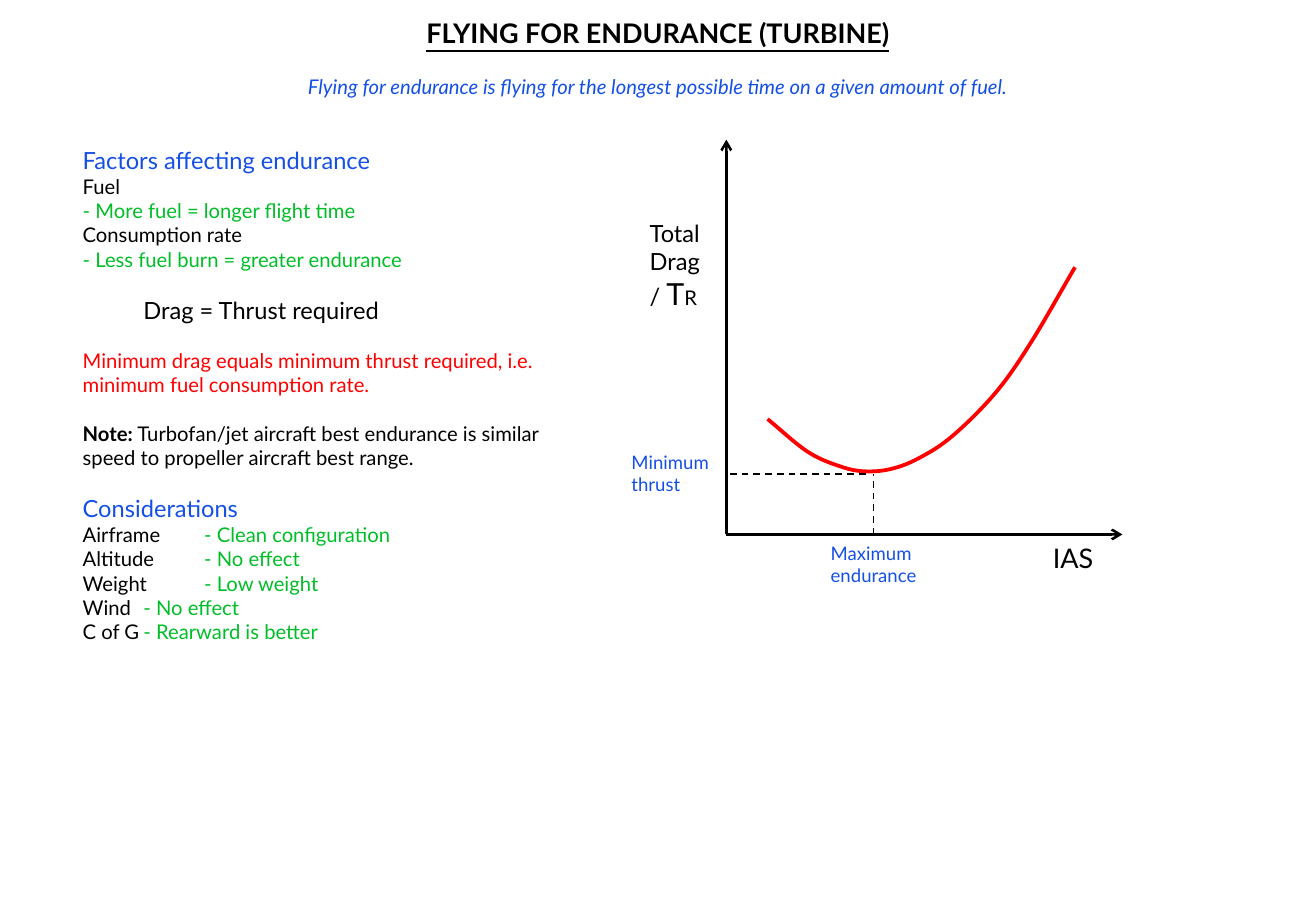
from lxml import etree
from pptx import Presentation
from pptx import util as u
from pptx.dml.color import RGBColor
from pptx.enum import dml, text
from pptx.enum.shapes import MSO_CONNECTOR
from pptx.oxml.ns import qn

COLORS = {"ink": "000000", "blue": "1450E6", "green": "00BE28", "red": "FF0000"}
GAP = 14.4
ORIGIN = (430.5, 316.8)
MINIMUM = (517.7, 280.8)
DRAG_KNOTS = [(455, 248.4), (478.8, 267.8), (498.2, 276.5), (512.6, 279.4), (528.5, 277.9),
              (545, 271.4), (564.5, 258.5), (589.7, 233.3), (610.6, 203.8), (637.2, 158.4)]


def line(*runs, before=0, indent=0, tab=None, align=text.PP_ALIGN.LEFT):
    """Describe a paragraph whose runs are (wording, size, colour, extra font values)."""
    return {"runs": runs, "before": before, "indent": indent, "tab": tab, "align": align}


def run(wording, size=12, color="ink", **extra):
    """Describe one run of text."""
    return wording, color, {"name": "Lato", "size": u.Pt(size), **extra}


def consideration(factor, advice, tab=72):
    """Describe a factor with its advice at a tab stop."""
    return line(run(factor + "\t"), run(advice, color="green"), tab=tab)


def apply(target, values):
    """Set each attribute of the target from a dict."""
    for name, value in values.items():
        setattr(target, name, value)


def write(shape, box, lines):
    """Place a text shape and fill it with formatted paragraphs."""
    apply(shape, dict(zip(("left", "top", "width", "height"), map(u.Pt, box))))
    frame = shape.text_frame
    apply(frame, {"word_wrap": True, "auto_size": text.MSO_AUTO_SIZE.SHAPE_TO_FIT_TEXT,
                  "vertical_anchor": text.MSO_ANCHOR.TOP})
    for index, entry in enumerate(lines):
        paragraph = frame.add_paragraph() if index else frame.paragraphs[0]
        apply(paragraph, {"alignment": entry["align"], "space_before": u.Pt(entry["before"])})
        properties = paragraph._p.get_or_add_pPr()
        properties.set("marL", str(u.Pt(entry["indent"])))
        properties.set("indent", "0")
        etree.SubElement(properties, qn("a:buNone"))
        if entry["tab"]:
            stops = etree.SubElement(properties, qn("a:tabLst"))
            etree.SubElement(stops, qn("a:tab"), pos=str(u.Pt(entry["tab"])), algn="l")
        for wording, color, values in entry["runs"]:
            part = paragraph.add_run()
            part.text = wording
            apply(part.font, values)
            part.font.color.rgb = RGBColor.from_string(COLORS[color])


def add_label(slide, box, *lines):
    """Add a free text label."""
    write(slide.shapes.add_textbox(0, 0, 0, 0), box, lines)


def add_line(slide, start, end, width, arrow=False, dashed=False):
    """Add a straight axis or guide line."""
    rule = slide.shapes.add_connector(MSO_CONNECTOR.STRAIGHT, *map(u.Pt, start + end))
    rule.line.color.rgb = RGBColor.from_string(COLORS["ink"])
    rule.line.width = u.Pt(width)
    if dashed:
        rule.line.dash_style = dml.MSO_LINE.DASH
    if arrow:
        etree.SubElement(rule.line._get_or_add_ln(), qn("a:tailEnd"), type="arrow")
    etree.SubElement(rule._element.spPr, qn("a:effectLst"))


def smooth(knots, steps=10):
    """Return points on a Catmull-Rom spline through the knots."""
    first, last = [tuple(2 * a - b for a, b in zip(*pair))
                   for pair in (knots[:2], knots[:-3:-1])]
    padded = [first, *knots, last]
    points = [knots[0]]
    for window in zip(padded, padded[1:], padded[2:], padded[3:]):
        for step in range(1, steps + 1):
            t = step / steps
            points.append(tuple(
                b + t * (c - a) / 2 + t ** 2 * (2 * a - 5 * b + 4 * c - d) / 2
                + t ** 3 * (3 * b - a - 3 * c + d) / 2
                for a, b, c, d in zip(*window)))
    return points


def add_curve(slide, knots, color, width):
    """Add a smooth open curve."""
    points = [tuple(map(u.Pt, point)) for point in smooth(knots)]
    builder = slide.shapes.build_freeform(*points[0])
    builder.add_line_segments(points[1:], close=False)
    curve = builder.convert_to_shape()
    curve.shadow.inherit = False
    curve.fill.background()
    curve.line.color.rgb = RGBColor.from_string(COLORS[color])
    curve.line.width = u.Pt(width)


def add_drag_graph(slide):
    """Draw the drag curve with its axes, guides and labels."""
    x, y = ORIGIN
    speed, thrust = MINIMUM
    add_line(slide, ORIGIN, (x, 82.8), 1.5, arrow=True)
    add_line(slide, ORIGIN, (665.3, y), 1.5, arrow=True)
    add_line(slide, (speed, y), MINIMUM, 1, dashed=True)
    add_line(slide, (432.7, thrust), (513.4, thrust), 1, dashed=True)
    add_label(slide, (378, 126, 52.6, 63.4),
              line(run("Total Drag / ", 14), run("T", 18), run("R", 12)))
    for left, top, words in ((485.3, 317.5, ("Maximum", "endurance")),
                             (367.2, 263.5, ("Minimum", "thrust"))):
        add_label(slide, (left, top, 108, 33.8),
                  *[line(run(word, 11, "blue")) for word in words])
    add_label(slide, (617, 317.5, 105, 26.6), line(run("IAS", 16)))
    add_curve(slide, DRAG_KNOTS, "red", 2.25)


def main():
    """Build the endurance slide."""
    deck = Presentation()
    apply(deck, {"slide_width": u.Pt(780), "slide_height": u.Pt(540)})
    slide = deck.slides.add_slide(deck.slide_layouts[1])
    center = text.PP_ALIGN.CENTER
    write(slide.shapes.title, (0, 6.5, 780, 26.6),
          [line(run("FLYING FOR ENDURANCE (TURBINE)", 16, bold=True, underline=True),
                align=center)])
    add_label(slide, (133, 40.3, 514, 21.6),
              line(run("Flying for endurance is flying for the longest possible time "
                       "on a given amount of fuel.", color="blue", italic=True), align=center))
    write(slide.placeholders[1], (41.8, 82.8, 289.4, 305.3), [
        line(run("Factors affecting endurance", 14, "blue")),
        line(run("Fuel")),
        line(run("- More fuel = longer flight time", color="green")),
        line(run("Consumption rate")),
        line(run("- Less fuel burn = greater endurance", color="green")),
        line(run("Drag = Thrust required", 14), before=GAP, indent=36),
        line(run("Minimum drag equals minimum thrust required, i.e. "
                 "minimum fuel consumption rate.", color="red"), before=GAP),
        line(run("Note:", bold=True),
             run(" Turbofan/jet aircraft best endurance is similar "
                 "speed to propeller aircraft best range."), before=GAP),
        line(run("Considerations", 14, "blue"), before=GAP),
        consideration("Airframe", "- Clean configuration"),
        consideration("Altitude", "- No effect"),
        consideration("Weight", "- Low weight"),
        consideration("Wind", "- No effect"),
        consideration("C of G", "- Rearward is better", tab=36),
    ])
    add_drag_graph(slide)
    deck.save("out.pptx")


if __name__ == "__main__":
    main()
